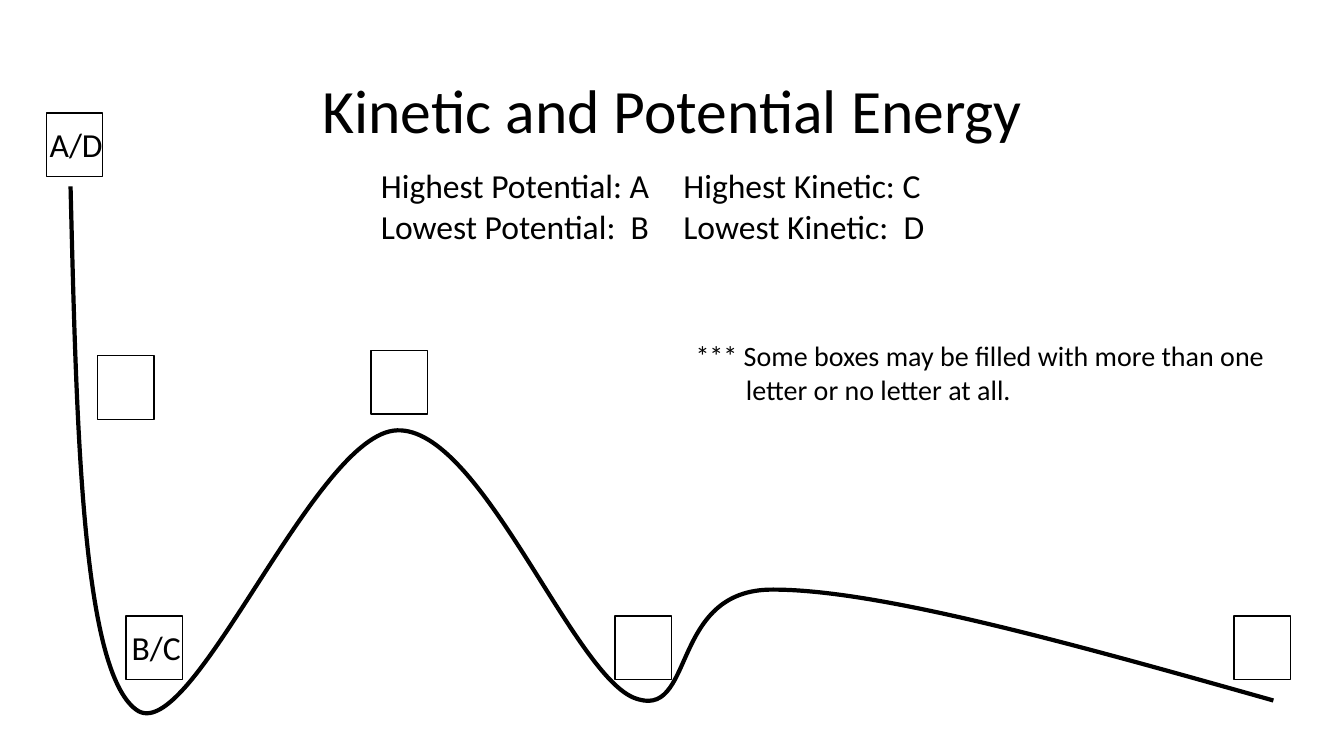
from lxml import etree
from pptx import Presentation
from pptx.dml.color import RGBColor
from pptx.enum.shapes import MSO_SHAPE
from pptx.enum.text import MSO_ANCHOR, MSO_AUTO_SIZE, PP_ALIGN
from pptx.oxml.ns import qn
from pptx.util import Inches, Pt

BLACK = RGBColor(0, 0, 0)
WHITE = RGBColor(255, 255, 255)
BOX_WIDTH, BOX_HEIGHT = 0.56, 0.63
TRACK_HEIGHT = 5.23


def write_lines(shape, lines, size, alignment=PP_ALIGN.LEFT):
    """Put each line in its own paragraph of the shape."""
    frame = shape.text_frame
    frame.word_wrap = True
    for index, line in enumerate(lines):
        paragraph = frame.paragraphs[0] if index == 0 else frame.add_paragraph()
        paragraph.alignment = alignment
        run = paragraph.add_run()
        run.text = line
        run.font.name = "Calibri"
        run.font.size = Pt(size)
        run.font.color.rgb = BLACK
    return frame


presentation = Presentation()
presentation.slide_width = Inches(13.33)
presentation.slide_height = Inches(7.5)
slide = presentation.slides.add_slide(presentation.slide_layouts[5])
shapes = slide.shapes

# Title
title = shapes.title
title.left, title.top = Inches(0.92), Inches(0.4)
title.width, title.height = Inches(11.5), Inches(1.45)
title_frame = write_lines(title, ["Kinetic and Potential Energy"], 44, PP_ALIGN.CENTER)
title_frame.auto_size = MSO_AUTO_SIZE.NONE
title_frame.vertical_anchor = MSO_ANCHOR.MIDDLE
title_frame.paragraphs[0].line_spacing = 0.9

# Roller coaster track: each row is two control points and an end point
track_points = [
    (0.76, 4.24), (0.81, 6.64), (1.35, 7.04),
    (1.89, 7.45), (3.12, 4.29), (3.94, 4.27),
    (4.76, 4.24), (5.66, 6.65), (6.28, 6.92),
    (6.91, 7.18), (6.62, 5.84), (7.67, 5.85),
    (8.73, 5.85), (10.68, 6.4), (12.63, 6.95),
]
builder = shapes.build_freeform(Inches(0.7), Inches(1.85))
builder.add_line_segments([(Inches(x), Inches(y)) for x, y in track_points], close=False)
track = builder.convert_to_shape()
track.shadow.inherit = False
track.fill.background()
track.line.color.rgb = BLACK
track.line.width = Pt(3)

# Join every three points into one Bezier curve and fit the frame to the curve
outline = track._element.find(".//" + qn("a:path"))
segments = outline.findall(qn("a:lnTo"))
for first in range(0, len(segments), 3):
    curve = etree.SubElement(outline, qn("a:cubicBezTo"))
    for segment in segments[first:first + 3]:
        curve.append(segment[0])
        outline.remove(segment)
track.height = Inches(TRACK_HEIGHT)
outline.set("h", str(Inches(TRACK_HEIGHT)))

# Answer key
answer_key = shapes.add_textbox(Inches(3.68), Inches(1.59), Inches(6.24), Inches(0.91))
write_lines(answer_key, [
    "Highest Potential: A\tHighest Kinetic: C",
    "Lowest Potential:  B\tLowest Kinetic:  D",
], 24)

# Answer boxes along the track
box_positions = [(0.46, 1.12), (1.25, 6.11), (0.97, 3.53), (3.68, 3.48), (12.24, 6.11), (6.1, 6.11)]
for left, top in box_positions:
    box = shapes.add_shape(
        MSO_SHAPE.RECTANGLE, Inches(left), Inches(top), Inches(BOX_WIDTH), Inches(BOX_HEIGHT)
    )
    box.shadow.inherit = False
    box.fill.solid()
    box.fill.fore_color.rgb = WHITE
    box.line.color.rgb = BLACK
    box.line.width = Pt(1)

# Note, with its second line indented
note = shapes.add_textbox(Inches(6.8), Inches(3.31), Inches(5.99), Inches(0.77))
note_frame = write_lines(note, [
    "*** Some boxes may be filled with more than one",
    "letter or no letter at all.",
], 20)
note_frame.paragraphs[1]._p.get_or_add_pPr().set("marL", str(Inches(0.5)))

# Letters in the filled boxes
for letters, left, top, width in [("A/D", 0.31, 1.18, 0.89), ("B/C", 1.19, 6.17, 0.72)]:
    label = shapes.add_textbox(Inches(left), Inches(top), Inches(width), Inches(0.5))
    write_lines(label, [letters], 24, PP_ALIGN.CENTER)

presentation.save("out.pptx")
